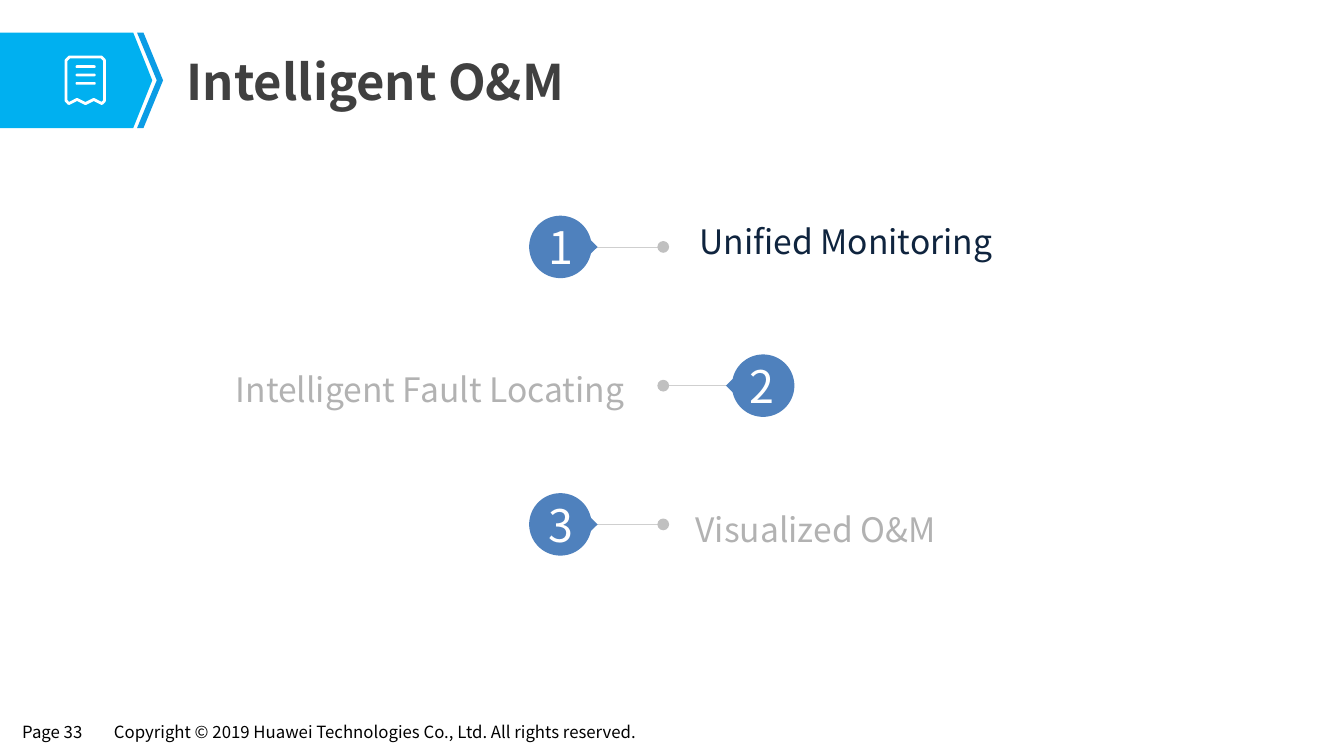
import math

import pptx
import pptx.dml.color
import pptx.enum.shapes
import pptx.enum.text
import pptx.oxml
import pptx.util

Pt = pptx.util.Pt
RGBColor = pptx.dml.color.RGBColor
ALIGN = pptx.enum.text.PP_ALIGN
ANCHOR = pptx.enum.text.MSO_ANCHOR
SHAPE = pptx.enum.shapes.MSO_SHAPE

FONT = "Noto Sans CJK SC"
BLACK = RGBColor(0x00, 0x00, 0x00)
WHITE = RGBColor(0xFF, 0xFF, 0xFF)
TITLE_GRAY = RGBColor(0x40, 0x40, 0x40)
BANNER = RGBColor(0x00, 0xB0, 0xF0)
BANNER_EDGE = RGBColor(0x0B, 0x9C, 0xE5)
BADGE = RGBColor(0x4F, 0x81, 0xBD)
DOT = RGBColor(0xC0, 0xC0, 0xC0)
RULE = RGBColor(0xCF, 0xCF, 0xCF)
ACTIVE = RGBColor(0x0F, 0x24, 0x3E)
MUTED = RGBColor(0xB2, 0xB2, 0xB2)

AXIS_X = 473.8
ROW_TOP, ROW_PITCH = 176.4, 99.1
DOT_SIZE = 8.4
BADGE_RADIUS, BADGE_TIP = 22.3, 26.6


def set_text(s, text, size, color, align=ALIGN.LEFT, insets=(0, 0, 0, 0), spacing=None, bold=False):
    """Fill a shape with one styled paragraph."""
    tf = s.text_frame
    tf.margin_left, tf.margin_top, tf.margin_right, tf.margin_bottom = map(Pt, insets)
    tf.vertical_anchor = ANCHOR.MIDDLE
    p = tf.paragraphs[0]
    p.text = text
    p.alignment = align
    p.line_spacing = spacing
    p.font.name, p.font.size, p.font.bold = FONT, Pt(size), bold
    p.font.color.rgb = color


def add_label(sp, box, text, size, color, wrap=True, **style):
    """Add a text box."""
    s = sp.add_textbox(*map(Pt, box))
    s.text_frame.word_wrap = wrap
    set_text(s, text, size, color, **style)


def paint(s, fill):
    """Give a shape a flat fill without line or shadow."""
    s.shadow.inherit = False
    s.fill.solid()
    s.fill.fore_color.rgb = fill
    s.line.fill.background()


def add_preset(sp, kind, box, fill):
    """Add a flat preset shape."""
    s = sp.add_shape(kind, *map(Pt, box))
    paint(s, fill)
    return s


def add_polygon(sp, points, fill):
    """Add a flat closed outline."""
    start, *rest = [(Pt(x), Pt(y)) for x, y in points]
    builder = sp.build_freeform(*start)
    builder.add_line_segments(rest, close=True)
    s = builder.convert_to_shape()
    paint(s, fill)
    return s


def add_header(sp, title):
    """Add the arrow banner, its receipt icon and the title."""
    top, middle, bottom = 23.3, 57.4, 91.5
    add_polygon(sp, [(0, top), (95.2, top), (108.8, middle), (95.2, bottom), (0, bottom)], BANNER)
    add_polygon(sp, [(97.9, top), (102.5, top), (116.5, middle), (102.5, bottom),
                     (97.9, bottom), (112, middle)], BANNER_EDGE)
    receipt = add_polygon(sp, [(47.2, 43), (49.5, 40.7), (72.5, 40.7), (74.6, 43), (74.6, 72),
                               (72.8, 74), (67, 71), (61, 74), (55, 71), (49.2, 74),
                               (47.2, 72)], WHITE)
    receipt.fill.background()
    receipt.line.color.rgb = WHITE
    receipt.line.width = Pt(2)
    for i in range(3):
        bar = add_preset(sp, SHAPE.ROUNDED_RECTANGLE, (54, 46.6 + 6 * i, 14.4, 1.9), WHITE)
        bar.adjustments[0] = 0.5
    add_label(sp, (125.3, 32.4, 774, 50.4), title, 35, TITLE_GRAY,
              insets=(7.9, 4, 7.9, 4), bold=True)


def add_badge(sp, number, x, y, side):
    """Add a numbered circle whose tip points to the given side."""
    arc = [math.radians(a) for a in range(12, 349, 4)]
    points = [(x + side * BADGE_TIP, y)]
    points += [(x + side * BADGE_RADIUS * math.cos(a), y + BADGE_RADIUS * math.sin(a)) for a in arc]
    s = add_polygon(sp, points, BADGE)
    insets = (0, 0, 2.9, 0) if side > 0 else (2.9, 0, 0, 0)
    set_text(s, str(number), 32, WHITE, ALIGN.CENTER, insets)


def add_rule(sp, x1, x2, y):
    """Add a thin horizontal line."""
    s = sp.add_connector(pptx.enum.shapes.MSO_CONNECTOR.STRAIGHT, Pt(x1), Pt(y), Pt(x2), Pt(y))
    s.line.color.rgb = RULE
    s.line.width = Pt(0.5)
    s._element.spPr.append(pptx.oxml.parse_xml(
        '<a:effectLst xmlns:a="http://schemas.openxmlformats.org/drawingml/2006/main"/>'))


def add_item(sp, number, text, color, box):
    """Add an agenda item, alternating sides of the axis."""
    side = 1 if number % 2 else -1
    y = ROW_TOP + (number - 1) * ROW_PITCH
    badge_x = 400.3 if side > 0 else 545.1
    add_rule(sp, AXIS_X, badge_x + side * 24.5, y)
    add_label(sp, box, text, 24, color, spacing=1.2,
              align=ALIGN.LEFT if side > 0 else ALIGN.RIGHT)
    add_preset(sp, SHAPE.OVAL, (AXIS_X - DOT_SIZE / 2, y - DOT_SIZE / 2, DOT_SIZE, DOT_SIZE), DOT)
    add_badge(sp, number, badge_x, y, side)


def main():
    """Build the agenda slide."""
    prs = pptx.Presentation()
    prs.slide_width, prs.slide_height = Pt(960), Pt(540)
    sp = prs.slides.add_slide(prs.slide_layouts[6]).shapes
    footers = [
        ("Page 33", 9.4, 60.5),
        ("Copyright © 2019 Huawei Technologies Co., Ltd. All rights reserved.", 74.9, 403.9),
    ]
    for text, left, width in footers:
        add_label(sp, (left, 511.9, width, 20.9), text, 12, BLACK, wrap=False,
                  insets=(6.5, 2.9, 6.5, 2.9))
    add_header(sp, "Intelligent O&M")
    items = [
        ("Unified Monitoring", ACTIVE, (499.7, 132.5, 247, 74.2)),
        ("Intelligent Fault Locating", MUTED, (151.2, 237.6, 294.5, 74.2)),
        ("Visualized O&M", MUTED, (496.8, 337.7, 247, 74.2)),
    ]
    for number, item in enumerate(items, 1):
        add_item(sp, number, *item)
    prs.save("out.pptx")


if __name__ == "__main__":
    main()
